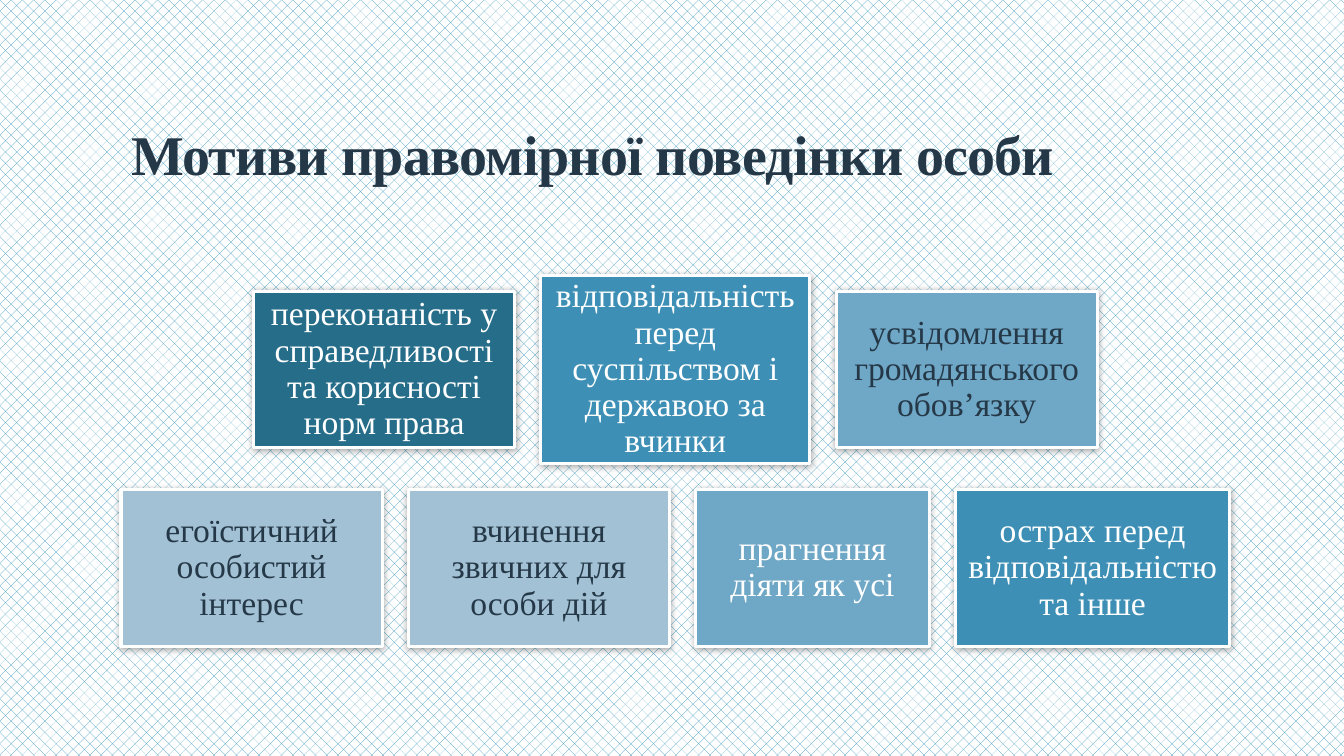
from lxml import etree
from pptx import Presentation
from pptx.dml.color import RGBColor
from pptx.enum.dml import MSO_PATTERN
from pptx.enum.shapes import MSO_SHAPE
from pptx.enum.text import MSO_ANCHOR, MSO_AUTO_SIZE, PP_ALIGN
from pptx.oxml.ns import qn
from pptx.util import Pt

PERCENT_25 = MSO_PATTERN.PERCENT_25
RECTANGLE = MSO_SHAPE.RECTANGLE
MIDDLE, BOTTOM = MSO_ANCHOR.MIDDLE, MSO_ANCHOR.BOTTOM
NO_AUTOFIT = MSO_AUTO_SIZE.NONE
LEFT, CENTER = PP_ALIGN.LEFT, PP_ALIGN.CENTER

WHITE = RGBColor(0xFF, 0xFF, 0xFF)
DARK = RGBColor(0x25, 0x38, 0x48)
HATCH_BLUE = RGBColor(0x34, 0x94, 0xBA)
DEEP_BLUE = RGBColor(0x26, 0x6D, 0x8A)
MID_BLUE = RGBColor(0x3D, 0x8F, 0xB5)
LIGHT_BLUE = RGBColor(0x6F, 0xA7, 0xC6)
PALE_BLUE = RGBColor(0xA2, 0xC1, 0xD4)

FONT = "Times New Roman"
ROW_CENTER_X = 482.4
CARD_GAP = 18.7
CARD_HEIGHT = 111.9

# Each card: text, width, height, fill colour, text colour
TOP_ROW = [
    ("переконаність у справедливості та корисності норм права",
     186.5, CARD_HEIGHT, DEEP_BLUE, WHITE),
    ("відповідальність перед суспільством і державою за вчинки",
     192.2, 134.6, MID_BLUE, WHITE),
    ("усвідомлення громадянського обов’язку",
     186.5, CARD_HEIGHT, LIGHT_BLUE, DARK),
]
BOTTOM_ROW = [
    ("егоїстичний особистий інтерес", 186.5, CARD_HEIGHT, PALE_BLUE, DARK),
    ("вчинення звичних для особи дій", 186.5, CARD_HEIGHT, PALE_BLUE, DARK),
    ("прагнення діяти як усі", 167, CARD_HEIGHT, LIGHT_BLUE, WHITE),
    ("острах перед відповідальністю та інше",
     195.8, CARD_HEIGHT, MID_BLUE, WHITE),
]


def set_background(slide):
    fill = slide.background.fill
    fill.patterned()
    fill.pattern = PERCENT_25
    fill.fore_color.rgb = HATCH_BLUE
    fill.back_color.rgb = WHITE


def set_text(shape, text, size, color, alignment, line_spacing):
    shape.text_frame.text = text
    paragraph = shape.text_frame.paragraphs[0]
    paragraph.alignment = alignment
    paragraph.line_spacing = line_spacing
    run = paragraph.runs[0]
    run.font.name = FONT
    run.font.size = Pt(size)
    run.font.color.rgb = color
    return run


def add_title(slide, text):
    title = slide.shapes.title
    title.left, title.top = Pt(86.4), Pt(22.3)
    title.width, title.height = Pt(792), Pt(114.5)
    run = set_text(title, text, 40, DARK, LEFT, 0.85)
    run.font.bold = True
    run.font._element.set("spc", "-50")
    title.text_frame.vertical_anchor = BOTTOM
    title.text_frame.auto_size = NO_AUTOFIT


def add_shadow(shape):
    shape.shadow.inherit = False
    effects = shape._element.spPr.find(qn("a:effectLst"))
    shadow = etree.SubElement(
        effects, qn("a:outerShdw"), blurRad=str(Pt(5)), dist=str(Pt(1)),
        dir="5400000", algn="ctr", rotWithShape="0")
    color = etree.SubElement(shadow, qn("a:srgbClr"), val="000000")
    etree.SubElement(color, qn("a:alpha"), val="32000")


def add_card(slide, left, center_y, card):
    text, width, height, fill_color, text_color = card
    shape = slide.shapes.add_shape(
        RECTANGLE, Pt(left), Pt(center_y - height / 2), Pt(width), Pt(height))
    shape.fill.solid()
    shape.fill.fore_color.rgb = fill_color
    shape.line.color.rgb = WHITE
    shape.line.width = Pt(2.25)
    add_shadow(shape)
    frame = shape.text_frame
    frame.word_wrap = True
    frame.vertical_anchor = MIDDLE
    frame.margin_left = frame.margin_right = Pt(7.2)
    frame.margin_top = frame.margin_bottom = Pt(7.2)
    set_text(shape, text, 24, text_color, CENTER, 0.9)


def add_card_row(slide, center_y, cards):
    """Lay the cards side by side with equal gaps, centred on the slide."""
    row_width = sum(card[1] for card in cards) + CARD_GAP * (len(cards) - 1)
    left = ROW_CENTER_X - row_width / 2
    for card in cards:
        add_card(slide, left, center_y, card)
        left += card[1] + CARD_GAP


def main():
    presentation = Presentation()
    presentation.slide_width, presentation.slide_height = Pt(960), Pt(540)
    slide = presentation.slides.add_slide(presentation.slide_layouts[5])
    set_background(slide)
    add_title(slide, "Мотиви правомірної поведінки особи")
    add_card_row(slide, 263.9, TOP_ROW)
    add_card_row(slide, 405.7, BOTTOM_ROW)
    presentation.save("out.pptx")


if __name__ == "__main__":
    main()
